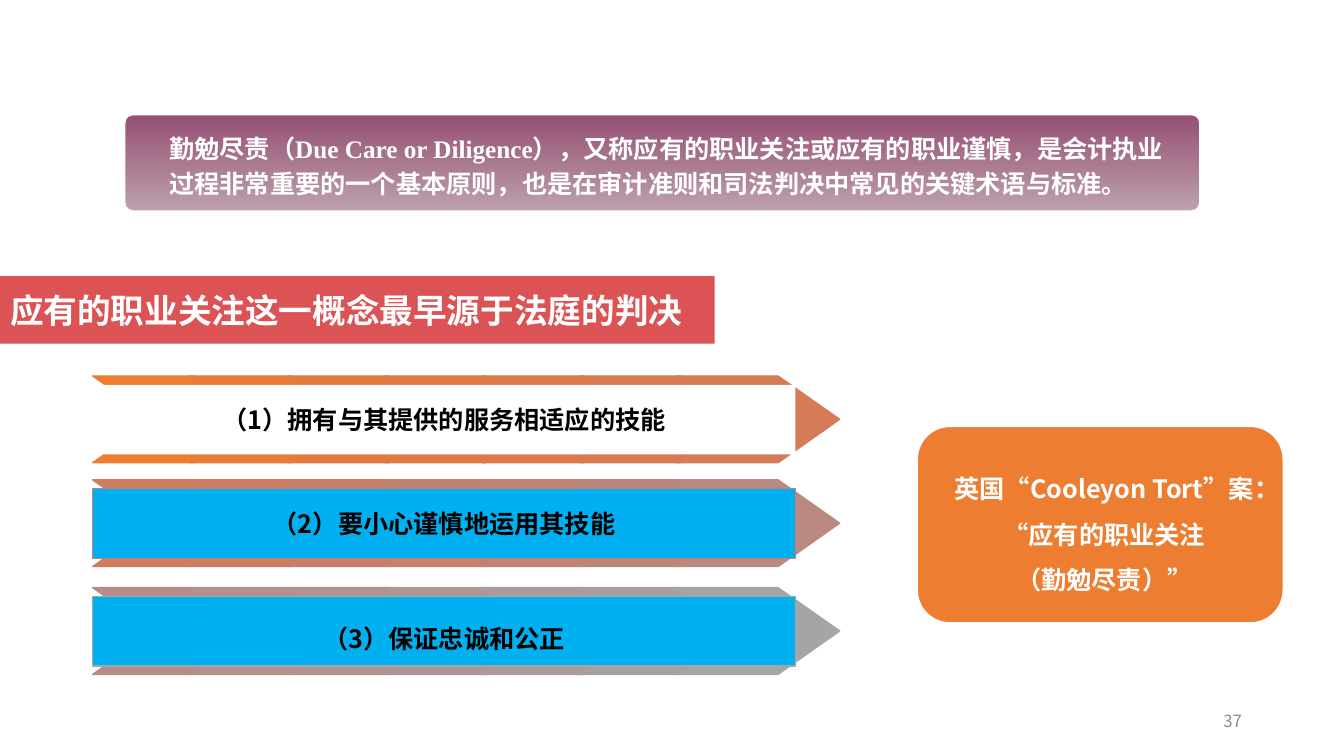
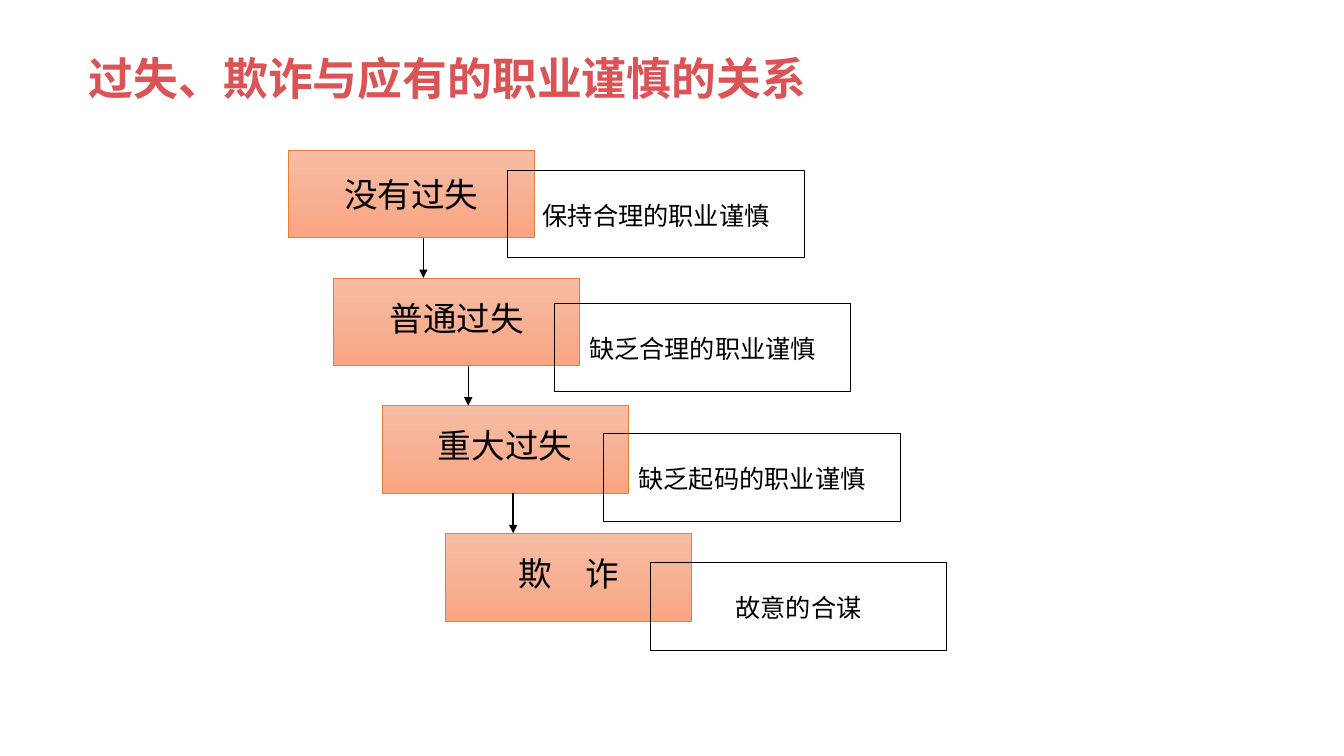
import colorsys
from dataclasses import dataclass

from lxml import etree
from pptx import Presentation
from pptx import util as u
from pptx.dml import color as dml
from pptx.enum import shapes, text
from pptx.oxml import ns

WIDTH, HEIGHT = u.Inches(13.33), u.Inches(7.5)
TITLE_ONLY = 5
LEFT, CENTER, RIGHT = text.PP_ALIGN.LEFT, text.PP_ALIGN.CENTER, text.PP_ALIGN.RIGHT
TOP, MIDDLE = text.MSO_ANCHOR.TOP, text.MSO_ANCHOR.MIDDLE
RECTANGLE = shapes.MSO_SHAPE.RECTANGLE
ROUNDED = shapes.MSO_SHAPE.ROUNDED_RECTANGLE
CHEVRON = shapes.MSO_SHAPE.CHEVRON


@dataclass(frozen=True)
class Theme:
    font: str = "Noto Sans CJK SC"
    serif: str = "Times New Roman"
    sans: str = "Arial"
    white: str = "FFFFFF"
    black: str = "000000"
    red: str = "DB5355"
    orange: str = "ED7D31"
    gray: str = "A5A5A5"
    number: str = "8C8C8C"
    blue: str = "00B0F0"
    purple: tuple[str, str] = ("954F72", "BDA1AD")
    peach: tuple[str, str] = ("F7BDA5", "F8A582")
    title: int = 32
    heading: int = 24
    body: int = 18
    small: int = 12


THEME = Theme()


@dataclass(frozen=True)
class Box:
    """Left, top, width and height as percent of the slide's size."""
    left: float
    top: float
    width: float
    height: float

    def lengths(self) -> tuple[int, int, int, int]:
        return (across(self.left), down(self.top), across(self.width), down(self.height))


@dataclass(frozen=True)
class Style:
    size: int = THEME.body
    color: str = THEME.black
    bold: bool = False
    font: str = THEME.font
    align: text.PP_ALIGN = CENTER
    anchor: text.MSO_ANCHOR = MIDDLE
    spacing: float | u.Pt | None = None


@dataclass(frozen=True)
class Duty:
    label: str
    top: float
    fill: str
    line: str | None
    spacing: float | u.Pt | None


@dataclass(frozen=True)
class Fault:
    label: str
    left: float
    note: str
    note_left: float
    note_top: float
    spacing: u.Pt | None = u.Pt(23)


DUTIES = [
    Duty("（1）拥有与其提供的服务相适应的技能", 49.73, THEME.white, None, u.Pt(21)),
    Duty("（2）要小心谨慎地运用其技能", 63.47, THEME.blue, "C48170", None),
    Duty("（3）保证忠诚和公正", 77.73, THEME.blue, THEME.gray, 1.5),
]
CHEVRONS_PER_DUTY = 7

FAULTS = [
    Fault("没有过失", 21.45, "保持合理的职业谨慎", 37.8, 22.53, None),
    Fault("普通过失", 24.83, "缺乏合理的职业谨慎", 41.25, 40.13),
    Fault("重大过失", 28.43, "缺乏起码的职业谨慎", 44.93, 57.33),
    Fault("欺　诈", 33.15, "故意的合谋", 48.38, 74.4),
]


def across(percent: float) -> int:
    return round(WIDTH * percent / 100)


def down(percent: float) -> int:
    return round(HEIGHT * percent / 100)


def rgb(value: str) -> dml.RGBColor:
    return dml.RGBColor.from_string(value)


def blend(start: str, end: str, share: float) -> str:
    """Mix two colours along hue, lightness and saturation."""
    first, last = (colorsys.rgb_to_hls(*(part / 255 for part in rgb(value)))
                   for value in (start, end))
    mixed = colorsys.hls_to_rgb(*(a + (b - a) * share for a, b in zip(first, last)))
    return "".join(f"{round(part * 255):02X}" for part in mixed)


def write(shape, lines: list[str], style: Style) -> None:
    frame = shape.text_frame
    frame.word_wrap = True
    frame.auto_size = text.MSO_AUTO_SIZE.NONE
    frame.vertical_anchor = style.anchor
    for index, line in enumerate(lines):
        paragraph = frame.add_paragraph() if index else frame.paragraphs[0]
        paragraph.text = line
        paragraph.alignment = style.align
        paragraph.line_spacing = style.spacing
        font = paragraph.font
        font.size, font.bold, font.name = u.Pt(style.size), style.bold, style.font
        font.color.rgb = rgb(style.color)
        latin = paragraph._p.pPr.find(".//" + ns.qn("a:latin"))
        east_asian = etree.Element(ns.qn("a:ea"), typeface=THEME.font)
        latin.addnext(east_asian)


def add_text(slide, box: Box, lines: list[str], style: Style) -> None:
    write(slide.shapes.add_textbox(*box.lengths()), lines, style)


def add_shape(slide, kind: shapes.MSO_SHAPE, box: Box,
              fill: str | tuple[str, str] | None = None,
              line: str | None = None, line_width: float = 1):
    """Draw a preset shape; a pair of fill colours runs from top to bottom."""
    shape = slide.shapes.add_shape(kind, *box.lengths())
    shape.shadow.inherit = False
    if fill is None:
        shape.fill.background()
    elif isinstance(fill, tuple):
        shape.fill.gradient()
        shape.fill.gradient_angle = 270
        for stop, value in zip(shape.fill.gradient_stops, fill):
            stop.color.rgb = rgb(value)
    else:
        shape.fill.solid()
        shape.fill.fore_color.rgb = rgb(fill)
    if line is None:
        shape.line.fill.background()
    else:
        shape.line.color.rgb = rgb(line)
        shape.line.width = u.Pt(line_width)
    return shape


def add_arrow(slide, left: float, top: float, bottom: float) -> None:
    arrow = slide.shapes.add_connector(
        shapes.MSO_CONNECTOR.STRAIGHT,
        across(left), down(top), across(left), down(bottom))
    arrow.line.color.rgb = rgb(THEME.black)
    arrow.line.width = u.Pt(1)
    etree.SubElement(arrow.line._get_or_add_ln(), ns.qn("a:tailEnd"), type="triangle")
    etree.SubElement(arrow._element.spPr, ns.qn("a:effectLst"))


def add_titled_slide(presentation, title: str, box: Box, style: Style):
    slide = presentation.slides.add_slide(presentation.slide_layouts[TITLE_ONLY])
    placeholder = slide.shapes.title
    placeholder.left, placeholder.top, placeholder.width, placeholder.height = box.lengths()
    write(placeholder, [title], style)
    return slide


def add_duty(slide, duty: Duty, first_chevron: int) -> None:
    """Draw a row of chevrons under a labelled bar."""
    left, pitch = 6.9, 7.25
    last_chevron = len(DUTIES) * CHEVRONS_PER_DUTY - 1
    for index in range(CHEVRONS_PER_DUTY):
        color = blend(THEME.orange, THEME.gray, (first_chevron + index) / last_chevron)
        chevron = add_shape(slide, CHEVRON,
                            Box(left + index * pitch, duty.top, 12.08, 11.47), color, color)
        chevron.adjustments[0] = 0.71
    bar = add_shape(slide, RECTANGLE, Box(left, duty.top + 1.17, 52.28, 9.2),
                    duty.fill, duty.line)
    frame = bar.text_frame
    frame.margin_left = frame.margin_right = u.Inches(0.07)
    frame.margin_top = frame.margin_bottom = u.Inches(0.07)
    write(bar, [duty.label], Style(bold=True, spacing=duty.spacing))


def build_due_care(presentation) -> None:
    slide = add_titled_slide(
        presentation, "应有的职业关注这一概念最早源于法庭的判决", Box(0, 36.53, 53.18, 8.93),
        Style(THEME.heading, THEME.white, True, THEME.sans, LEFT))
    slide.shapes.title.fill.solid()
    slide.shapes.title.fill.fore_color.rgb = rgb(THEME.red)

    definition = add_shape(slide, ROUNDED, Box(9.23, 15.07, 80.1, 12.93),
                           THEME.purple, THEME.white, 2)
    definition.adjustments[0] = 0.09
    add_text(slide, Box(11.85, 16.4, 75.98, 10.27),
             ["勤勉尽责（Due Care or Diligence），又称应有的职业关注或应有的职业谨慎，"
              "是会计执业过程非常重要的一个基本原则，也是在审计准则和司法判决中常见的关键术语与标准。"],
             Style(THEME.body, THEME.white, True, THEME.serif, LEFT, TOP, u.Pt(25)))

    add_shape(slide, ROUNDED, Box(68.25, 56.4, 27.23, 26), THEME.orange, THEME.white)
    add_text(slide, Box(69.6, 60, 25.13, 18.53),
             ["英国“Cooleyon Tort”案：", "“应有的职业关注", "（勤勉尽责）”"],
             Style(color=THEME.white, bold=True, anchor=TOP, spacing=1.5))

    for row, duty in enumerate(DUTIES):
        add_duty(slide, duty, row * CHEVRONS_PER_DUTY)
    add_text(slide, Box(70.65, 92.67, 22.5, 5.33), ["37"],
             Style(THEME.small, THEME.number, align=RIGHT))


def build_fault_levels(presentation) -> None:
    slide = add_titled_slide(
        presentation, "过失、欺诈与应有的职业谨慎的关系", Box(5.85, 6, 55.43, 8.53),
        Style(THEME.title, THEME.red, True, align=LEFT, anchor=TOP))
    first_top, pitch, height = 19.87, 16.89, 11.6
    tops = [first_top + row * pitch for row in range(len(FAULTS))]
    for fault, top in zip(FAULTS, tops):
        step = add_shape(slide, RECTANGLE, Box(fault.left, top, 18.3, height),
                         THEME.peach, THEME.orange, 0.5)
        write(step, [fault.label], Style(THEME.heading, spacing=fault.spacing))
    for fault in FAULTS:
        note = add_shape(slide, RECTANGLE, Box(fault.note_left, fault.note_top, 22.05, height),
                         line=THEME.black, line_width=0.75)
        write(note, [fault.note], Style(spacing=u.Pt(23)))
    for row, (top, next_top) in enumerate(zip(tops, tops[1:])):
        add_arrow(slide, 31.5 + row * 3.34, top + height, next_top)


def main() -> None:
    presentation = Presentation()
    presentation.slide_width, presentation.slide_height = WIDTH, HEIGHT
    build_due_care(presentation)
    build_fault_levels(presentation)
    presentation.save("out.pptx")


if __name__ == "__main__":
    main()
